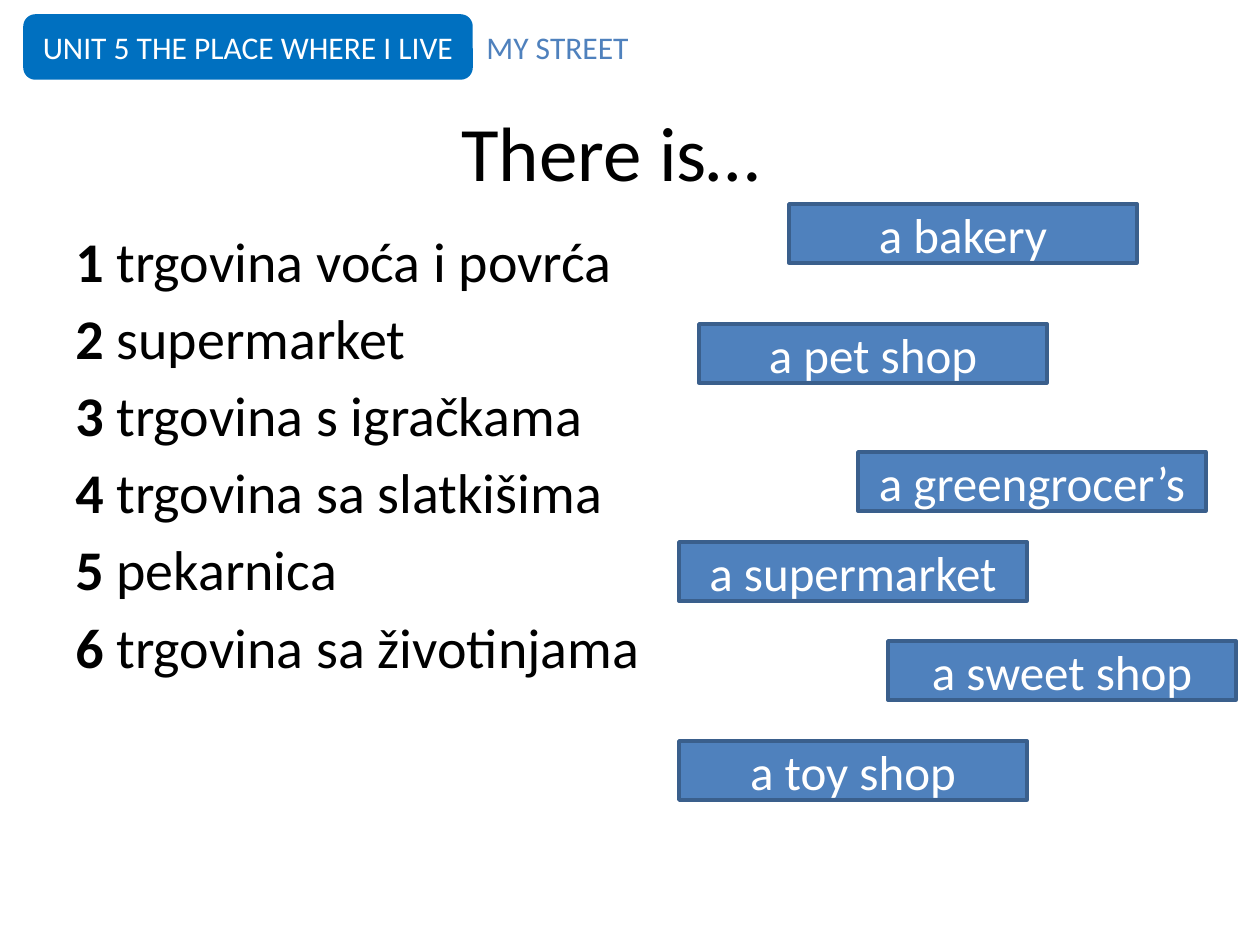
from dataclasses import dataclass
from pptx import Presentation
from pptx import util as u
from pptx.dml.color import RGBColor
from pptx.enum import shapes, text


@dataclass
class Theme:
    font: str = "Calibri"
    ink: str = "000000"
    white: str = "FFFFFF"
    blue: str = "4F81BD"
    edge: str = "3A5F8C"
    unit: str = "0070C0"
    head: int = 44
    body: int = 32
    card: int = 28
    small: int = 18


theme = Theme()
SCALE = 914400 / 126
LEFT, MID = text.PP_ALIGN.LEFT, text.PP_ALIGN.CENTER


def place(*box):
    return [u.Emu(round(n * SCALE)) for n in box]


def write(para, words, size, color, align=LEFT, bold=False):
    para.alignment = align
    run = para.add_run()
    run.text = words
    run.font.name = theme.font
    run.font.size = u.Pt(size)
    run.font.bold = bold
    run.font.color.rgb = RGBColor.from_string(color)


deck = Presentation()
deck.slide_width, deck.slide_height = place(1260, 945)
slide = deck.slides.add_slide(deck.slide_layouts[5])

title = slide.shapes.title
title.left, title.top, title.width, title.height = place(44, 92, 1134, 117)
title.text_frame.vertical_anchor = text.MSO_ANCHOR.MIDDLE
write(title.text_frame.paragraphs[0], "There is…", theme.head, theme.ink, MID)

RECT = shapes.MSO_SHAPE.RECTANGLE
ROUND = shapes.MSO_SHAPE.ROUNDED_RECTANGLE
cards = [
    ("a bakery", 789, 204),
    ("a supermarket", 679, 542),
    ("a sweet shop", 888, 641),
    ("a pet shop", 699, 324),
    ("a greengrocer’s", 858, 452),
    ("a toy shop", 679, 741),
]
boxes = [
    (RECT, words, (x, y, 348, 59), theme.blue, theme.edge, theme.card)
    for words, x, y in cards
]
boxes.append((ROUND, "UNIT 5 THE PLACE WHERE I LIVE", (25, 16, 446, 62),
              theme.unit, theme.unit, theme.small))
for kind, words, box, fill, edge, size in boxes:
    shape = slide.shapes.add_shape(kind, *place(*box))
    shape.shadow.inherit = False
    shape.fill.solid()
    shape.fill.fore_color.rgb = RGBColor.from_string(fill)
    shape.line.color.rgb = RGBColor.from_string(edge)
    shape.line.width = u.Pt(2)
    frame = shape.text_frame
    frame.word_wrap = True
    frame.vertical_anchor = text.MSO_ANCHOR.MIDDLE
    write(frame.paragraphs[0], words, size, theme.white, MID)

places = [
    "trgovina voća i povrća",
    "supermarket",
    "trgovina s igračkama",
    "trgovina sa slatkišima",
    "pekarnica",
    "trgovina sa životinjama",
]
frame = slide.shapes.add_textbox(*place(63, 220, 1134, 624)).text_frame
frame.word_wrap = True
for num, words in enumerate(places, 1):
    para = frame.paragraphs[0] if num == 1 else frame.add_paragraph()
    para.space_before = u.Pt(5.7)
    write(para, f"{num} ", theme.body, theme.ink, bold=True)
    write(para, words, theme.body, theme.ink)

frame = slide.shapes.add_textbox(*place(474, 16, 233, 62)).text_frame
frame.word_wrap = True
frame.vertical_anchor = text.MSO_ANCHOR.MIDDLE
write(frame.paragraphs[0], "MY STREET", theme.small, theme.blue)

deck.save("out.pptx")
